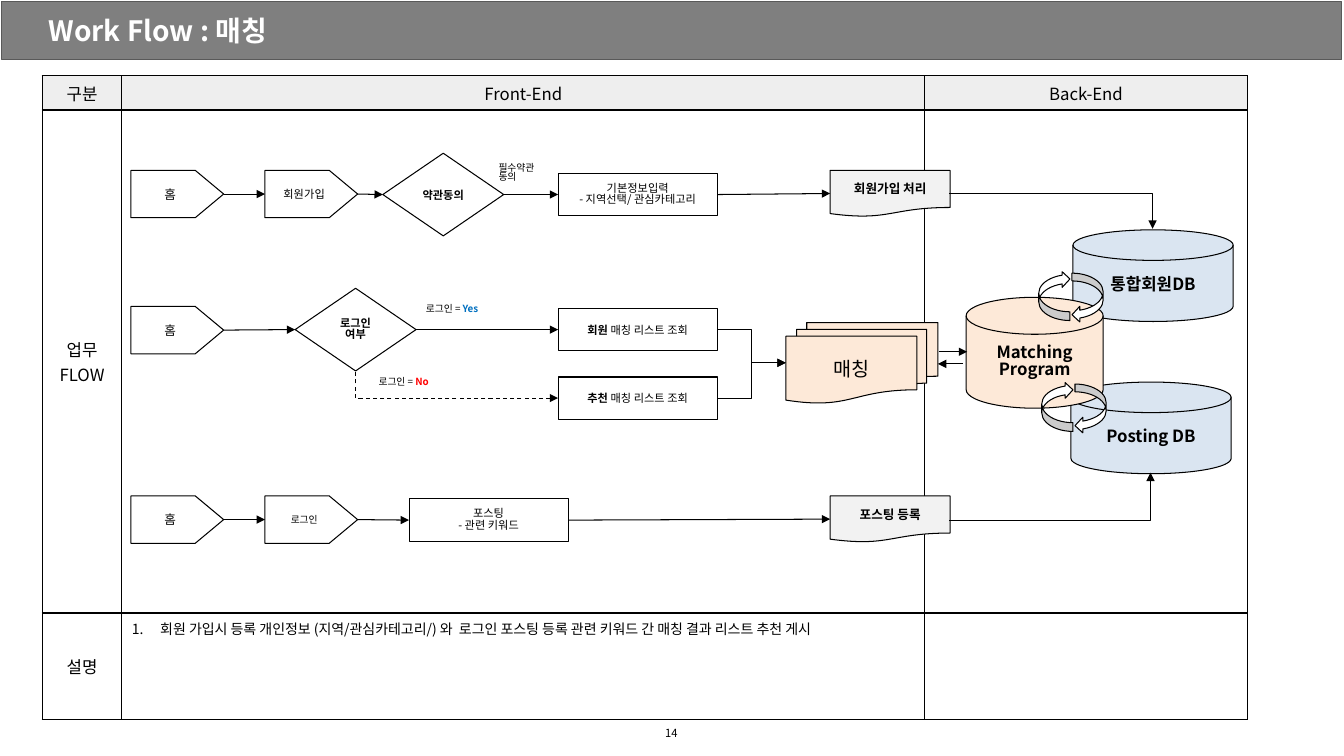
from lxml.etree import SubElement
from pptx import Presentation
from pptx.dml.color import RGBColor
from pptx.enum.dml import MSO_LINE
from pptx.enum.shapes import MSO_CONNECTOR as LINK, MSO_SHAPE as KIND
from pptx.enum.text import MSO_ANCHOR as ANCHOR, MSO_AUTO_SIZE as AUTO, PP_ALIGN as ALIGN
from pptx.oxml.ns import qn
from pptx.util import Emu, Pt

PX = 9144
NOTO, BLACK, WHITE = "Noto Sans CJK KR", "000000", "FFFFFF"
BLUE, PEACH, GREY = "DAE5F1", "FDE9D8", "F2F2F2"
TOP, LEFT, BOTTOM, RIGHT = range(4)

TITLE = "Work Flow : 매칭"
COLUMNS, ROWS = (79, 797, 320), (34, 499, 106)
CELLS = [
    [["구분"], ["Front-End"], ["Back-End"]],
    [["업무", "FLOW"], [], []],
    [["설명"], [" 회원 가입시 등록 개인정보 (지역/관심카테고리/) 와  로그인 포스팅 등록 관련 키워드 간 매칭 결과 리스트 추천 게시"], []],
]
STYLES = {
    "step": (KIND.PENTAGON, 92, 47, None, "Arial", False),
    "process": (KIND.FLOWCHART_PROCESS, 158, 42, None, NOTO, False),
    "decision": (KIND.FLOWCHART_DECISION, 120, 82, WHITE, NOTO, True),
    "document": (KIND.FLOWCHART_DOCUMENT, 119, 46, GREY, NOTO, True),
    "documents": (KIND.FLOWCHART_MULTIDOCUMENT, 151, 80, PEACH, NOTO, False),
    "database": (KIND.FLOWCHART_MAGNETIC_DISK, 159, 91, BLUE, NOTO, True),
    "program": (KIND.FLOWCHART_MAGNETIC_DISK, 136, 110, PEACH, NOTO, True),
}
NODES = [
    ("join home", "step", 130, 169, 9, ["홈"]),
    ("join", "step", 263, 169, 8, ["회원가입"]),
    ("terms", "decision", 380, 152, 8, ["약관동의"]),
    ("profile", "process", 554, 172, 8, ["기본정보입력", "- 지역선택/ 관심카테고리"]),
    ("join document", "document", 824, 169, 9, ["회원가입 처리"]),
    ("match home", "step", 130, 304, 9, ["홈"]),
    ("login check", "decision", 293, 286, 8, ["로그인", "여부"]),
    ("member list", "process", 554, 306, 8, [[("회원", True, BLACK), (" 매칭 리스트 조회", False, BLACK)]]),
    ("suggested list", "process", 554, 374, 8, [[("추천", True, BLACK), (" 매칭 리스트 조회", False, BLACK)]]),
    ("matching", "documents", 780, 320, 14, ["매칭"]),
    ("post home", "step", 130, 492, 9, ["홈"]),
    ("login", "step", 263, 492, 7, ["로그인"]),
    ("posting", "process", 406, 495, 8, ["포스팅", "- 관련 키워드"]),
    ("post document", "document", 824, 492, 9, ["포스팅 등록"]),
    ("posting database", "database", 1063, 379, 12, ["Posting DB"]),
    ("member database", "database", 1065, 228, 12, ["통합회원DB"]),
    ("program", "program", 959, 295, 12, ["Matching", "Program"]),
]
CHAINS = [
    ("join home", "join", "terms", "profile", "join document"),
    ("match home", "login check", "member list"),
    ("post home", "login", "posting", "post document"),
]
EXCHANGES = [(932, 349, 960, 349), (956, 361, 931, 361)]
CORNERS = [
    ((942, 192, 1144, 227), "tailEnd", None),
    ((942, 516, 1142, 469), "tailEnd", None),
    ((554, 395, 353, 368), "headEnd", MSO_LINE.DASH),
]
MERGES = [(712, 327, 780, 360), (712, 395, 780, 360)]
LABELS = [
    (485, 155, 74, 34, ["필수약관", "동의"]),
    (413, 295, 87, 22, [[("로그인 = ", False, BLACK), ("Yes", True, "0070C0")]]),
    (366, 368, 87, 22, [[("로그인 = ", False, BLACK), ("No", True, "FF0000")]]),
]
CYCLES = [(1031, 269), (1034, 379)]


def px(*values):
    return [Emu(value * PX) for value in values]


def color(value):
    return RGBColor.from_string(value)


def write(frame, lines, size, font=NOTO, bold=False, ink=BLACK, align=ALIGN.CENTER, spacing=None):
    for index, line in enumerate(lines):
        paragraph = frame.add_paragraph() if index else frame.paragraphs[0]
        paragraph.alignment = align
        if spacing and len(lines) > 1:
            paragraph.line_spacing = spacing
        for text, strong, tint in [(line, bold, ink)] if isinstance(line, str) else line:
            run = paragraph.add_run()
            run.text = text
            run.font.size, run.font.bold, run.font.name = Pt(size), strong, font
            run.font.color.rgb = color(tint)
            SubElement(run.font._element, qn("a:ea"), typeface=font)


def set_frame(frame, left=10, top=5, right=10, bottom=5):
    frame.word_wrap, frame.auto_size = True, AUTO.NONE
    frame.vertical_anchor = ANCHOR.MIDDLE
    frame.margin_left, frame.margin_top, frame.margin_right, frame.margin_bottom = px(left, top, right, bottom)
    return frame


def add_shape(shapes, kind, box, fill=None, line=BLACK):
    shape = shapes.add_shape(kind, *px(*box))
    shape.shadow.inherit = False
    if fill:
        shape.fill.solid()
        shape.fill.fore_color.rgb = color(fill)
    else:
        shape.fill.background()
    shape.line.color.rgb, shape.line.width = color(line), Pt(0.75)
    return shape


def add_label(slide, box, lines, size, align):
    frame = set_frame(slide.shapes.add_textbox(*px(*box)).text_frame)
    write(frame, lines, size, align=align, spacing=0.8)


def add_arrow(slide, kind, ends=(0, 0, 0, 0), arrowhead="tailEnd", dash=None):
    connector = slide.shapes.add_connector(kind, *px(*ends))
    connector.line.color.rgb, connector.line.width = color(BLACK), Pt(0.75)
    if dash:
        connector.line.dash_style = dash
    properties = connector.element.spPr
    SubElement(properties.find(qn("a:ln")), qn("a:" + arrowhead), type="triangle")
    SubElement(properties, qn("a:effectLst"))
    return connector


def add_title(slide):
    title = slide.shapes.title
    title.left, title.top, title.width, title.height = px(29, 0, 1276, 60)
    write(set_frame(title.text_frame, 19, 6, 11, 6), [TITLE], 20, bold=True, ink=WHITE, align=ALIGN.LEFT)
    bar = add_shape(slide.shapes, KIND.RECTANGLE, (2, 2, 1330, 57), "7F7F7F", "595959")
    title.element.addprevious(bar.element)


def format_cell(cell, fill):
    properties = cell._tc.get_or_add_tcPr()
    for side in ("lnL", "lnR", "lnT", "lnB"):
        border = SubElement(properties, qn("a:" + side), w=str(Pt(1)))
        SubElement(SubElement(border, qn("a:solidFill")), qn("a:srgbClr"), val=BLACK)
    if fill:
        cell.fill.solid()
        cell.fill.fore_color.rgb = color(fill)
    else:
        cell.fill.background()


def add_grid(slide):
    box = px(42, 75, sum(COLUMNS), sum(ROWS))
    table = slide.shapes.add_table(len(ROWS), len(COLUMNS), *box).table
    table.first_row = table.horz_banding = False
    for column, width in zip(table.columns, px(*COLUMNS)):
        column.width = width
    for row, height in zip(table.rows, px(*ROWS)):
        row.height = height
    for r, row in enumerate(CELLS):
        for c, lines in enumerate(row):
            cell, note = table.cell(r, c), (r, c) == (2, 1)
            format_cell(cell, None if r else "EEEEEE")
            cell.vertical_anchor = ANCHOR.TOP if note else ANCHOR.MIDDLE
            write(cell.text_frame, lines, 10 if note else 12, align=ALIGN.LEFT if note else ALIGN.CENTER)
    numbered = table.cell(2, 1).text_frame.paragraphs[0]._p.get_or_add_pPr()
    numbered.set("marL", str(25 * PX))
    numbered.set("indent", str(-25 * PX))
    SubElement(numbered, qn("a:buFont"), typeface="+mj-lt")
    SubElement(numbered, qn("a:buAutoNum"), type="arabicPeriod")


def add_nodes(slide):
    nodes = {}
    for name, style, left, top, size, lines in NODES:
        kind, width, height, fill, font, bold = STYLES[style]
        shape = add_shape(slide.shapes, kind, (left, top, width, height), fill)
        if style == "step":
            shape.adjustments[0] = 0.6
        side = 4 if style == "decision" else 10
        write(set_frame(shape.text_frame, side, 5, side, 5), lines, size, font, bold, spacing=0.85)
        nodes[name] = shape
    return nodes


def add_cycle(slide, left, top):
    group = slide.shapes.add_group_shape()
    for x, y, turn, thickness in ((left + 33, top + 2, 0, 0.25), (left, top, 180, 0.28)):
        arrow = add_shape(group.shapes, KIND.CURVED_LEFT_ARROW, (x, y, 31, 49), WHITE)
        arrow.rotation, arrow.adjustments[0] = turn, thickness


def add_arrows(slide, nodes):
    for chain in CHAINS:
        for start, end in zip(chain, chain[1:]):
            connector = add_arrow(slide, LINK.STRAIGHT)
            connector.begin_connect(nodes[start], RIGHT)
            connector.end_connect(nodes[end], LEFT)
    for ends in EXCHANGES:
        add_arrow(slide, LINK.STRAIGHT, ends)
    for ends in MERGES:
        add_arrow(slide, LINK.ELBOW, ends)
    for corner in CORNERS:
        connector = add_arrow(slide, LINK.ELBOW, *corner)
        connector.element.spPr.find(qn("a:prstGeom")).set("prst", "bentConnector2")


def main():
    """Build the matching work flow slide."""
    presentation = Presentation()
    presentation.slide_width, presentation.slide_height = px(1334, 750)
    slide = presentation.slides.add_slide(presentation.slide_layouts[5])
    add_title(slide)
    add_grid(slide)
    add_arrows(slide, add_nodes(slide))
    for cycle in CYCLES:
        add_cycle(slide, *cycle)
    for *box, lines in LABELS:
        add_label(slide, box, lines, 7, ALIGN.LEFT)
    add_label(slide, (0, 708, 1333, 39), ["14"], 8, ALIGN.CENTER)
    presentation.save("out.pptx")


if __name__ == "__main__":
    main()
